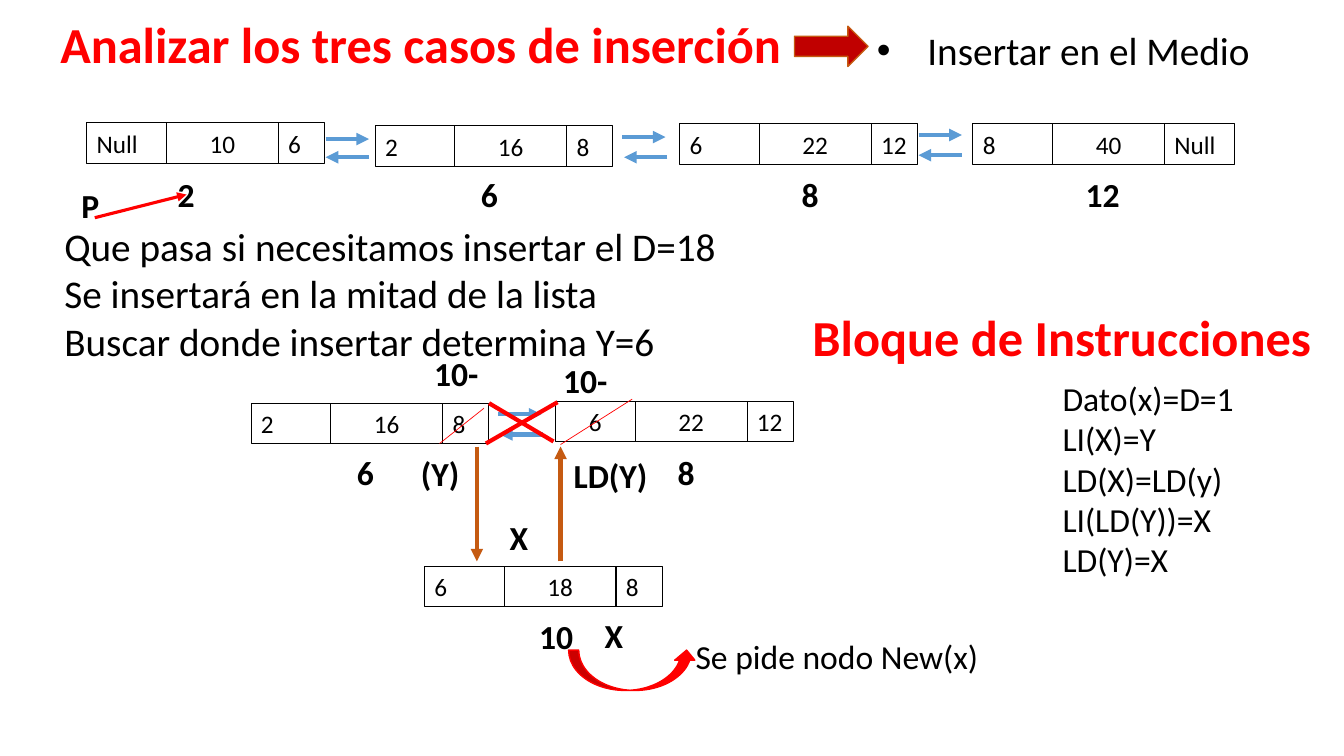
from lxml import etree
from pptx import Presentation
from pptx.dml.color import RGBColor
from pptx.enum import shapes, text
from pptx.oxml import ns
from pptx.util import Inches, Pt

BLACK = RGBColor(0x00, 0x00, 0x00)
WHITE = RGBColor(0xFF, 0xFF, 0xFF)
RED = RGBColor(0xFF, 0x00, 0x00)
DARK_RED = RGBColor(0xC0, 0x00, 0x00)
BLUE = RGBColor(0x5B, 0x9B, 0xD5)
ORANGE = RGBColor(0xC5, 0x5A, 0x11)

FONT = "Calibri"
LEFT_LINK_WIDTH, DATA_WIDTH, RIGHT_LINK_WIDTH = 0.79, 1.11, 0.46
FIELD_HEIGHT = 0.4
LINK_LENGTH = 0.43


def write(frame, lines, size=24, color=BLACK, bold=False, center=False, bullet=None):
    """Fill a text frame, one paragraph per line."""
    frame.word_wrap = True
    for index, line in enumerate(lines.split("\n")):
        paragraph = frame.paragraphs[0] if index == 0 else frame.add_paragraph()
        paragraph.alignment = text.PP_ALIGN.CENTER if center else text.PP_ALIGN.LEFT
        if bullet:
            properties = paragraph._p.get_or_add_pPr()
            properties.set("marL", str(Inches(0.5)))
            properties.set("indent", str(-Inches(0.5)))
            etree.SubElement(properties, ns.qn("a:buFont"), typeface="Arial")
            etree.SubElement(properties, ns.qn("a:buChar"), char=bullet)
        run = paragraph.add_run()
        run.text = line
        run.font.name = FONT
        run.font.size = Pt(size)
        run.font.bold = bold
        run.font.color.rgb = color


def add_text(slide, left, top, width, height, lines, **style):
    box = slide.shapes.add_textbox(Inches(left), Inches(top), Inches(width), Inches(height))
    write(box.text_frame, lines, **style)


def add_label(slide, left, top, label, width=0.71):
    add_text(slide, left, top, width, 0.5, label, bold=True, center=True)


def add_figure(slide, kind, left, top, width, height, line, weight, fill=None):
    figure = slide.shapes.add_shape(
        kind, Inches(left), Inches(top), Inches(width), Inches(height))
    figure.shadow.inherit = False
    if fill is None:
        figure.fill.background()
    else:
        figure.fill.solid()
        figure.fill.fore_color.rgb = fill
    figure.line.color.rgb = line
    figure.line.width = Pt(weight)
    return figure


def add_line(slide, start, end, color, weight, arrow=False):
    line = slide.shapes.add_connector(
        shapes.MSO_CONNECTOR.STRAIGHT, *(Inches(value) for value in (*start, *end)))
    line.line.color.rgb = color
    line.line.width = Pt(weight)
    if arrow:
        etree.SubElement(line.line._get_or_add_ln(), ns.qn("a:tailEnd"), type="triangle")
    etree.SubElement(line._element.spPr, ns.qn("a:effectLst"))


def add_node(slide, left, top, fields, last_width=RIGHT_LINK_WIDTH,
             centered=(1,), last_fill=None):
    """List node: left link, data and right link."""
    widths = (LEFT_LINK_WIDTH, DATA_WIDTH, last_width)
    fills = (None, None, last_fill)
    for index, (field, width, fill) in enumerate(zip(fields, widths, fills)):
        cell = add_figure(slide, shapes.MSO_SHAPE.RECTANGLE, left, top, width,
                          FIELD_HEIGHT, BLACK, 0.75, fill)
        cell.text_frame.vertical_anchor = text.MSO_ANCHOR.MIDDLE
        write(cell.text_frame, field, size=18, center=index in centered)
        left += width


def add_links(slide, left, top, shift=0.0, gap=0.2):
    """Forward arrow with the backward arrow below it."""
    right, back_left, bottom = left + LINK_LENGTH, left + shift, top + gap
    add_line(slide, (left, top), (right, top), BLUE, 3, arrow=True)
    add_line(slide, (back_left + LINK_LENGTH, bottom), (back_left, bottom),
             BLUE, 3, arrow=True)


def add_headings(slide):
    add_text(slide, 0.5, 0.08, 7.46, 0.71, "Analizar los tres casos de inserción",
             size=36, color=RED, bold=True)
    add_text(slide, 8.6, 0.21, 4.4, 0.57, "Insertar en el Medio", size=28, bullet="•")
    add_figure(slide, shapes.MSO_SHAPE.RIGHT_ARROW, 7.88, 0.26, 0.73, 0.4,
               ORANGE, 1, DARK_RED)
    add_text(slide, 0.54, 2.16, 12.24, 1.51,
             "Que pasa si necesitamos insertar el D=18\n"
             "Se insertará en la mitad de la lista\n"
             "Buscar donde insertar determina Y=6", size=28)


def add_initial_list(slide):
    add_links(slide, 3.23, 1.38, gap=0.18)
    add_links(slide, 6.17, 1.36, shift=0.02)
    add_links(slide, 9.11, 1.34)
    add_node(slide, 0.86, 1.22, ("Null", "10", "6"))
    add_node(slide, 3.72, 1.25, ("2", "16", "8"))
    add_node(slide, 6.74, 1.23, ("6", "22", "12"))
    add_node(slide, 9.65, 1.23, ("8", "40", "Null"), last_width=0.69)
    for left, address in ((1.49, "2"), (4.5, "6"), (7.68, "8"), (10.58, "12")):
        add_label(slide, left, 1.68, address)
    # Pointer to the head of the list
    add_label(slide, 0.54, 1.79, "P")
    add_line(slide, (0.94, 2.16), (1.85, 1.93), RED, 2.25, arrow=True)


def add_insertion(slide):
    # Neighbours and new node
    add_links(slide, 4.94, 4.11, shift=0.02)
    add_node(slide, 2.49, 4, ("2", "16", "8"), last_fill=WHITE)
    add_node(slide, 5.51, 3.98, ("6", "22", "12"), centered=(0, 1))
    add_node(slide, 4.21, 5.62, ("6", "18", "8"))
    for left, top, label in (
            (3.27, 4.43, "6"), (6.45, 4.43, "8"), (5.16, 6.06, "10"),
            (4.01, 4.44, "(Y)"), (4.79, 5.08, "X"),
            (5.45, 3.52, "10-"), (4.17, 3.45, "10-")):
        add_label(slide, left, top, label)
    add_label(slide, 5.56, 4.46, "LD(Y)", width=0.99)
    add_label(slide, 5.86, 6.05, "X", width=0.46)

    # New links
    add_line(slide, (4.73, 4.43), (4.73, 5.57), ORANGE, 3, arrow=True)
    add_line(slide, (5.56, 5.57), (5.56, 4.43), ORANGE, 3, arrow=True)

    # Replaced values and broken links
    add_line(slide, (6.27, 3.96), (5.56, 4.41), RED, 0.5)
    add_line(slide, (4.8, 4.05), (4.36, 4.4), RED, 0.5)
    add_line(slide, (5.53, 3.99), (4.82, 4.4), RED, 3)
    add_line(slide, (4.85, 4), (5.49, 4.38), RED, 3)

    # Node request
    add_text(slide, 6.8, 6.26, 3.68, 0.5, "Se pide nodo New(x)")
    add_figure(slide, shapes.MSO_SHAPE.CURVED_UP_ARROW, 5.64, 6.45, 1.27, 0.4,
               RED, 1, RED)


def add_instructions(slide):
    add_text(slide, 7.96, 2.99, 5.32, 0.71, "Bloque de Instrucciones",
             size=36, color=RED, bold=True)
    add_text(slide, 10.44, 3.7, 2, 2.12,
             "Dato(x)=D=1\nLI(X)=Y\nLD(X)=LD(y)\nLI(LD(Y))=X\nLD(Y)=X")


def main():
    presentation = Presentation()
    presentation.slide_width = Inches(13.33)
    presentation.slide_height = Inches(7.5)
    slide = presentation.slides.add_slide(presentation.slide_layouts[6])
    add_headings(slide)
    add_initial_list(slide)
    add_insertion(slide)
    add_instructions(slide)
    presentation.save("out.pptx")


if __name__ == "__main__":
    main()
